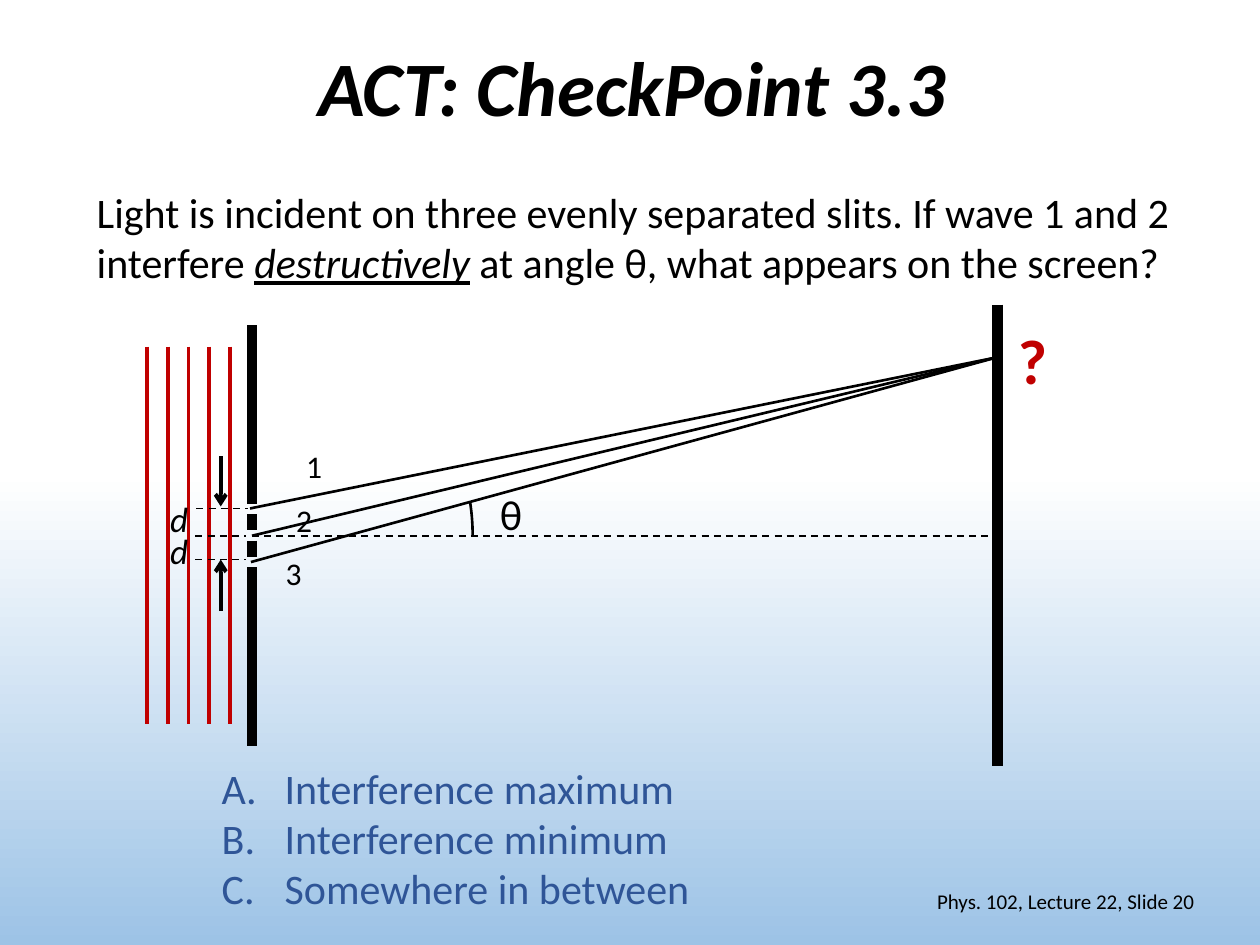
import pptx
import pptx.dml.color
import pptx.enum.dml
import pptx.enum.shapes
import pptx.enum.text
import pptx.oxml.xmlchemy
import pptx.util

Cm = pptx.util.Cm
Pt = pptx.util.Pt
ALIGN = pptx.enum.text.PP_ALIGN
ANCHOR = pptx.enum.text.MSO_ANCHOR

COLORS = {"ink": "000000", "light": "C00000", "answer": "2F5597",
          "sky_top": "FFFFFF", "sky_bottom": "9DC3E6"}

# Key positions of the experiment, in cm
SLITS_X, SCREEN_X, AXIS_Y, SPOT_Y = 5.08, 20.11, 10.8, 7.2
ARROW_X, ARC_RADIUS = 4.45, 4.45


def rgb(name):
    return pptx.dml.color.RGBColor.from_string(COLORS[name])


def sub_element(parent, tag, **attributes):
    element = pptx.oxml.xmlchemy.OxmlElement(tag)
    for key, value in attributes.items():
        element.set(key, value)
    parent.append(element)


def paint_background(page):
    fill = page.background.fill
    fill.gradient()
    fill.gradient_angle = 270
    stops = ((0.5, "sky_top"), (1.0, "sky_bottom"))
    for stop, (position, color) in zip(fill.gradient_stops, stops):
        stop.position = position
        stop.color.rgb = rgb(color)


def add_line(page, start, end, width, color="ink", dashed=False, arrow=False):
    line = page.shapes.add_connector(
        pptx.enum.shapes.MSO_CONNECTOR.STRAIGHT,
        *(Cm(value) for value in (*start, *end)))
    line.line.color.rgb = rgb(color)
    line.line.width = Pt(width)
    if dashed:
        line.line.dash_style = pptx.enum.dml.MSO_LINE.DASH
    if arrow:
        sub_element(line.get_or_add_ln(), "a:tailEnd", type="arrow")
    sub_element(line._element.spPr, "a:effectLst")


def add_text(page, place, paragraphs, size, color="ink", wrap=True,
             anchor=ANCHOR.TOP, font=None, layout=None):
    """Each paragraph is a list of (text, font format) spans."""
    box = page.shapes.add_textbox(*(Cm(value) for value in place))
    frame = box.text_frame
    frame.word_wrap = wrap
    frame.vertical_anchor = anchor
    for number, spans in enumerate(paragraphs):
        para = frame.add_paragraph() if number else frame.paragraphs[0]
        for key, value in (layout or {}).items():
            setattr(para, key, value)
        for text, extra in spans:
            span = para.add_run()
            span.text = text
            formats = {"name": "Calibri", "size": Pt(size), **(font or {}), **extra}
            for key, value in formats.items():
                setattr(span.font, key, value)
            span.font.color.rgb = rgb(color)
    return box


def add_label(page, text, place, size, **options):
    return add_text(page, place, [[(text, {})]], size, **options)


def add_answers(page, answers):
    box = add_text(page, (4.22, 15.24, 10.16, 3.33),
                   [[(answer, {})] for answer in answers], 24, color="answer")
    for para in box.text_frame.paragraphs:
        properties = para._p.get_or_add_pPr()
        properties.set("marL", str(Cm(1.27)))
        properties.set("indent", str(-Cm(1.27)))
        sub_element(properties, "a:buFont", typeface="+mj-lt")
        sub_element(properties, "a:buAutoNum", type="alphaUcPeriod")


def add_angle_arc(page):
    arc = page.shapes.add_shape(
        pptx.enum.shapes.MSO_SHAPE.ARC,
        Cm(SLITS_X - ARC_RADIUS), Cm(AXIS_Y - ARC_RADIUS),
        Cm(2 * ARC_RADIUS), Cm(2 * ARC_RADIUS))
    # Angles are in 60000ths of a degree, scaled down by 100000
    for index, degrees in enumerate((351.28, 359.94)):
        arc.adjustments[index] = degrees * 0.6
    arc.shadow.inherit = False
    arc.fill.background()
    arc.line.color.rgb = rgb("ink")
    arc.line.width = Pt(1.5)


def draw_experiment(page):
    # Incoming wave fronts
    for number in range(5):
        x = 2.96 + 0.42 * number
        add_line(page, (x, 6.99), (x, 14.6), 2.25, color="light")

    # Barrier with three slits, and the screen
    for top, bottom in ((6.56, 10.16), (10.37, 10.69), (10.9, 11.22), (11.43, 15.03)):
        add_line(page, (SLITS_X, top), (SLITS_X, bottom), 6)
    add_line(page, (SCREEN_X, 6.14), (SCREEN_X, 15.45), 6)

    # Central axis, rays and angle
    add_line(page, (SLITS_X, AXIS_Y), (SCREEN_X, AXIS_Y), 1, dashed=True)
    for start in ((5.04, 10.25), (SLITS_X, AXIS_Y), (5.06, 11.33)):
        add_line(page, start, (SCREEN_X, SPOT_Y), 1.5)
    add_angle_arc(page)
    add_label(page, "θ", (9.83, 9.73, 0.97, 1.27), 24, wrap=False)

    # Slit spacing
    for left, right, y in ((3.96, 5, 10.25), (3.94, 4.95, AXIS_Y), (3.94, 4.95, 11.28)):
        add_line(page, (left, y), (right, y), 1, dashed=True)
    for tail_y, head_y in ((9.2, 10.21), (12.32, 11.28)):
        add_line(page, (ARROW_X, tail_y), (ARROW_X, head_y), 2.25, arrow=True)
    for top in (9.91, 10.54):
        add_label(page, "d", (3.18, top, 0.94, 1.12), 20, font={"italic": True})

    # Ray numbers and the unknown spot
    for text, left, top in (("1", 5.92, 8.89), ("2", 5.72, 9.98), ("3", 5.51, 11.05)):
        add_label(page, text, (left, top, 0.84, 1.02), 18, wrap=False)
    add_label(page, "?", (20.27, 6.35, 1.12, 1.8), 36, color="light",
              wrap=False, font={"bold": True})


def main():
    deck = pptx.Presentation()
    deck.slide_width, deck.slide_height = Cm(25.4), Cm(19.05)
    page = deck.slides.add_slide(deck.slide_layouts[6])
    paint_background(page)

    # Title, footer and question
    add_label(page, "ACT: CheckPoint 3.3", (1.8, 0, 21.89, 3.68), 44,
              anchor=ANCHOR.MIDDLE, font={"bold": True, "italic": True},
              layout={"alignment": ALIGN.CENTER, "line_spacing": 0.9})
    add_label(page, "Phys. 102, Lecture 22, Slide 20", (17.93, 17.65, 6.4, 1.02), 12,
              anchor=ANCHOR.MIDDLE, layout={"alignment": ALIGN.RIGHT})
    add_text(page, (1.7, 3.63, 22.66, 2.31), [[
        ("Light is incident on three evenly separated slits. "
         "If wave 1 and 2 interfere ", {}),
        ("destructively", {"italic": True, "underline": True}),
        (" at angle θ, what appears on the screen?", {})]], 24)

    draw_experiment(page)
    add_answers(page, ("Interference maximum", "Interference minimum",
                       "Somewhere in between"))
    deck.save("out.pptx")


if __name__ == "__main__":
    main()
